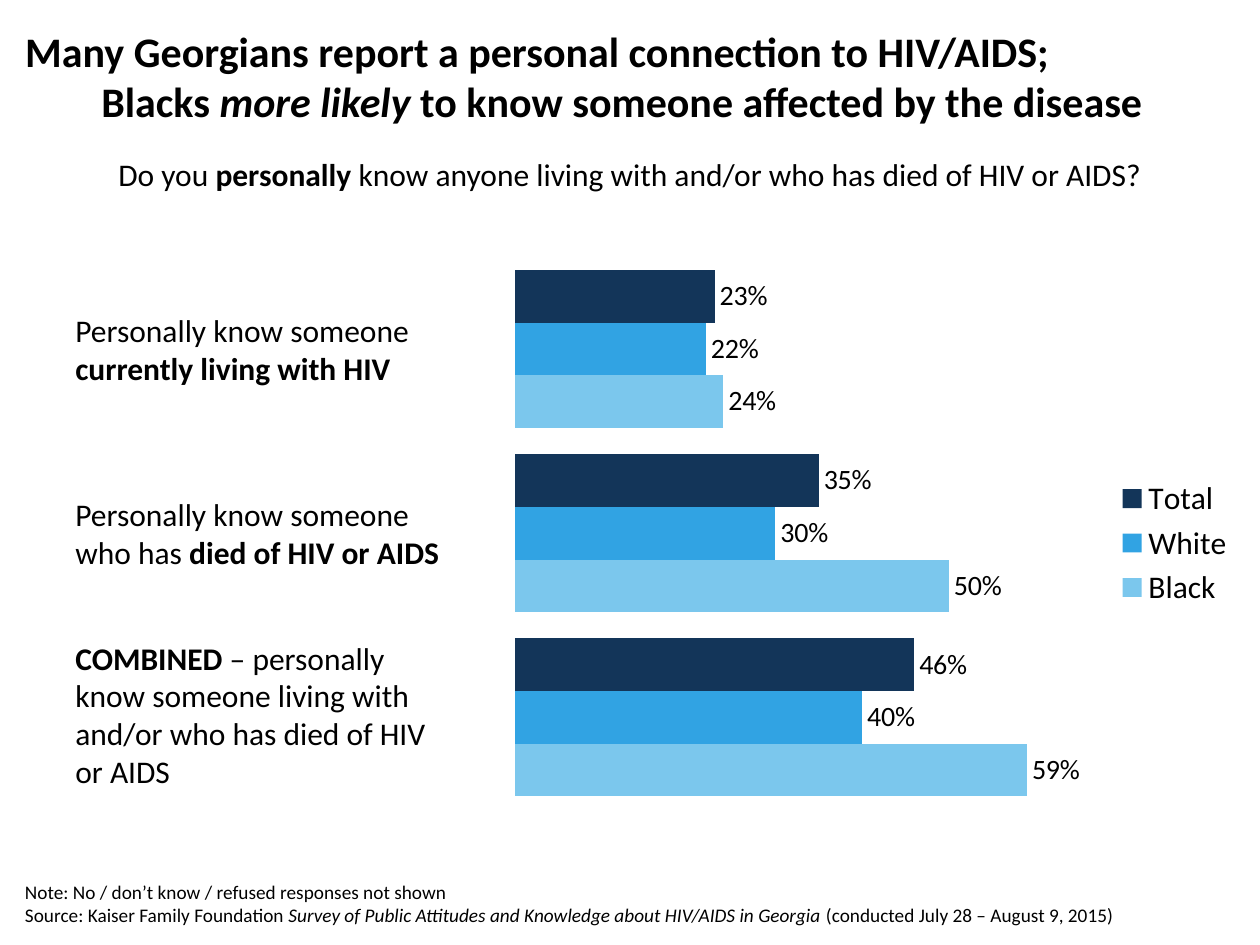
import pptx
import pptx.chart.data
import pptx.dml.color
import pptx.enum.chart
import pptx.enum.text
import pptx.oxml
import pptx.oxml.ns
import pptx.util

Pt = pptx.util.Pt
RGB = pptx.dml.color.RGBColor
Align = pptx.enum.text.PP_ALIGN
Anchor = pptx.enum.text.MSO_ANCHOR
Fit = pptx.enum.text.MSO_AUTO_SIZE
Kind = pptx.enum.chart.XL_CHART_TYPE
Side = pptx.enum.chart.XL_LEGEND_POSITION
Spot = pptx.enum.chart.XL_LABEL_POSITION

BLACK = RGB(0x00, 0x00, 0x00)
NAVY = RGB(0x13, 0x35, 0x59)
BLUE = RGB(0x31, 0xA3, 0xE3)
SKY = RGB(0x7B, 0xC7, 0xED)

BOLD = {"bold": True}
ITALIC = {"italic": True}
EDGE, WIDE = 7.2, 705.6


def apply(item, values):
    for name, value in values.items():
        setattr(item, name, value)


class Deck:
    def __init__(self, font):
        self.font = font
        self.show = pptx.Presentation()
        apply(self.show, {"slide_width": Pt(720), "slide_height": Pt(540)})
        self.slide = self.show.slides.add_slide(self.show.slide_layouts[5])

    def style(self, font, size, extra):
        apply(font, {"name": self.font, "size": Pt(size), **extra})
        font.color.rgb = BLACK

    def fill(self, frame, lines, size, align=Align.LEFT, extra={}):
        for num, line in enumerate(lines):
            para = frame.add_paragraph() if num else frame.paragraphs[0]
            para.alignment = align
            for words, look in line:
                if words == "\v":
                    para.add_line_break()
                    continue
                run = para.add_run()
                run.text = words
                self.style(run.font, size, {**extra, **look})

    def title(self, box, line, size, hang):
        shape = self.slide.shapes.title
        apply(shape, dict(zip(("left", "top", "width", "height"), map(Pt, box))))
        frame = shape.text_frame
        apply(frame, {"word_wrap": True, "auto_size": Fit.NONE,
                      "vertical_anchor": Anchor.MIDDLE})
        self.fill(frame, [line], size, extra=BOLD)
        props = frame.paragraphs[0]._p.get_or_add_pPr()
        props.set("marL", str(Pt(hang)))
        props.set("indent", str(-Pt(hang)))

    def text(self, box, lines, size, align=Align.LEFT, anchor=Anchor.TOP,
             fit=Fit.SHAPE_TO_FIT_TEXT):
        frame = self.slide.shapes.add_textbox(*map(Pt, box)).text_frame
        apply(frame, {"word_wrap": True, "auto_size": fit,
                      "vertical_anchor": anchor})
        self.fill(frame, lines, size, align)

    def bars(self, box, cats, rows, area, top):
        data = pptx.chart.data.CategoryChartData(number_format="0%")
        data.categories = cats
        for name, _, vals in rows:
            data.add_series(name, vals)
        chart = self.slide.shapes.add_chart(
            Kind.BAR_CLUSTERED, *map(Pt, box), data).chart
        apply(chart, {"has_title": False, "has_legend": True})
        self.style(chart.font, 18, {})
        apply(chart.legend, {"position": Side.RIGHT, "include_in_layout": False})
        self.style(chart.legend.font, 18, {})
        for axis in (chart.category_axis, chart.value_axis):
            apply(axis, {"visible": False, "has_major_gridlines": False})
        apply(chart.value_axis, {"minimum_scale": 0, "maximum_scale": top})
        plot = chart.plots[0]
        apply(plot, {"gap_width": 50, "vary_by_categories": False})
        for series, (_, color, _) in zip(plot.series, rows):
            series.format.fill.solid()
            series.format.fill.fore_color.rgb = color
            labels = series.data_labels
            apply(labels, {"show_value": True, "number_format": "0%",
                           "number_format_is_linked": False,
                           "position": Spot.OUTSIDE_END})
            self.style(labels.font, 16, {})
        self.place(chart, area)

    def place(self, chart, area):
        modes = '<c:layoutTarget val="inner"/><c:xMode val="edge"/><c:yMode val="edge"/>'
        sizes = "".join(f'<c:{key} val="{val}"/>' for key, val in zip("xywh", area))
        layout = pptx.oxml.parse_xml(
            f'<c:layout {pptx.oxml.ns.nsdecls("c")}><c:manualLayout>'
            f"{modes}{sizes}</c:manualLayout></c:layout>")
        field = chart.element.find(".//" + pptx.oxml.ns.qn("c:plotArea"))
        for old in field.findall(pptx.oxml.ns.qn("c:layout")):
            field.remove(old)
        field.insert(0, layout)


def main():
    deck = Deck("Calibri")
    deck.bars((EDGE, 146.9, WIDE, 326.9), ("1", "2", "3"), (
        ("Black", SKY, (0.59, 0.50, 0.24)),
        ("White", BLUE, (0.46 - 0.06, 0.30, 0.22)),
        ("Total", NAVY, (0.46, 0.35, 0.23)),
    ), (0.407, 0, 0.492, 0.966), 0.7)
    deck.title((EDGE, EDGE, WIDE, 72), (
        ("Many Georgians report a personal connection to HIV/AIDS;", {}),
        ("\v", {}),
        ("Blacks ", {}),
        ("more likely ", ITALIC),
        ("to know someone affected by the disease", {}),
    ), 24, 43.5)
    deck.text((EDGE, 85, WIDE, 29), [(
        ("Do you ", {}),
        ("personally ", BOLD),
        ("know anyone living with and/or who has died of HIV or AIDS?", {}),
    )], 18, Align.CENTER)
    deck.text((EDGE, 489.6, 655.2, 43.2), [
        (("Note: No / don’t know / refused responses not shown", {}),),
        (("Source: Kaiser Family Foundation ", {}),
         ("Survey of Public Attitudes and Knowledge about HIV/AIDS in Georgia ", ITALIC),
         ("(conducted July 28 – August 9, 2015)", {})),
    ], 11, anchor=Anchor.BOTTOM, fit=Fit.NONE)
    for top, high, line in (
        (174.2, 51, (("Personally know someone ", {}),
                     ("currently living with HIV", BOLD))),
        (279.4, 51, (("Personally know someone who has ", {}),
                     ("died of HIV or AIDS", BOLD))),
        (361.4, 94.3, (("COMBINED", BOLD),
                       (" – personally know someone living with and/or "
                        "who has died of HIV or AIDS", {}))),
    ):
        deck.text((36, top, 228.2, high), [line], 18)
    deck.show.save("out.pptx")


if __name__ == "__main__":
    main()
